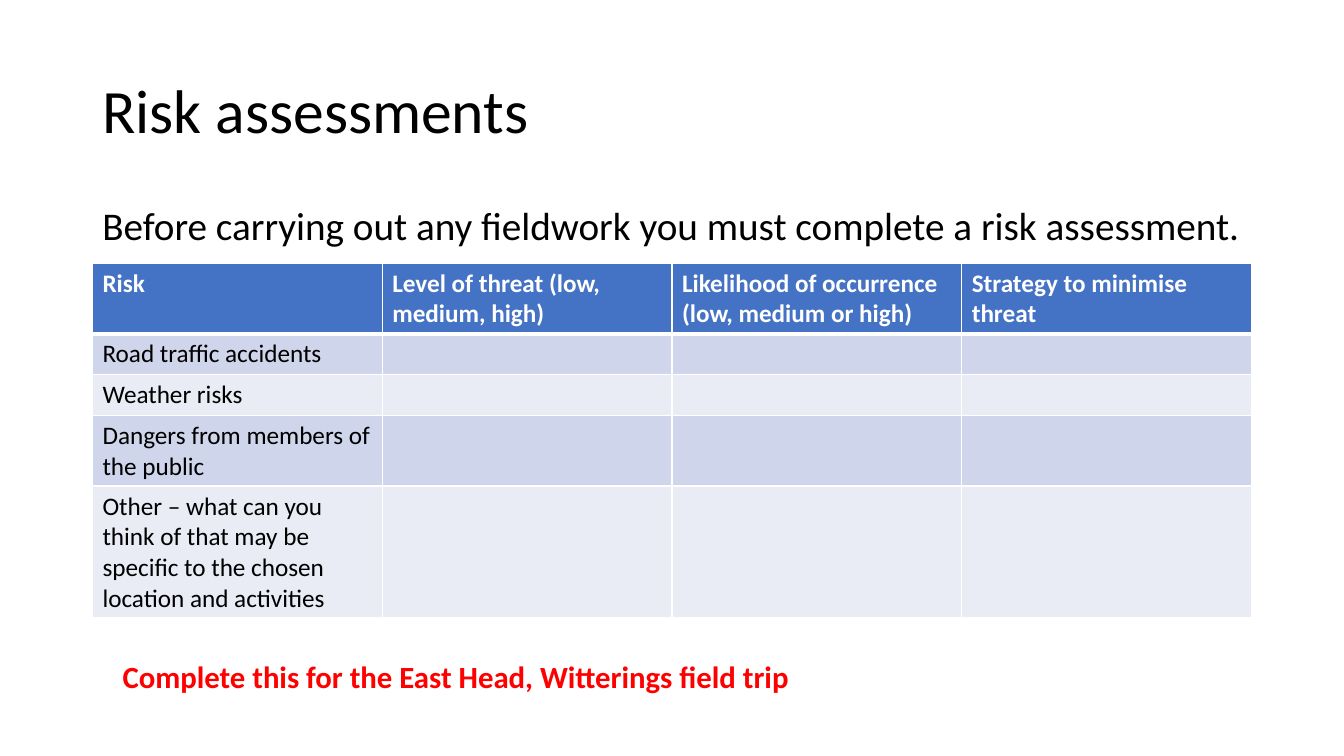
from pptx import Presentation
from pptx.dml.color import RGBColor
from pptx.enum.text import MSO_ANCHOR
from pptx.oxml.ns import qn
from pptx.util import Cm, Pt
from lxml import etree

MIDDLE, TOP = MSO_ANCHOR.MIDDLE, MSO_ANCHOR.TOP

# Content
TITLE = "Risk assessments"
INTRO = "Before carrying out any fieldwork you must complete a risk assessment."
TASK = "Complete this for the East Head, Witterings field trip"
HEADINGS = [
    "Risk",
    "Level of threat (low, medium, high)",
    "Likelihood of occurrence (low, medium or high)",
    "Strategy to minimise threat",
]
RISKS = [
    "Road traffic accidents",
    "Weather risks",
    "Dangers from members of the public",
    "Other – what can you think of that may be specific to the chosen "
    "location and activities",
]

THEME = {
    "font": "Calibri",
    "title": 44, "intro": 28, "task": 22, "cell": 18,
    "text": "000000", "alert": "FF0000", "header_text": "FFFFFF",
    "header": "4472C4", "bands": ("CFD5EA", "E9EBF5"),
    "border": "FFFFFF", "thin": 1, "thick": 3,
}

# Layout in centimetres
LEFT, WIDTH = 2.33, 29.21
TABLE_TOP, ROW_HEIGHT = 6.63, 1.03


def add_span(para, text, size, colour, bold=False):
    span = para.add_run()
    span.text = text
    font = span.font
    font.name = THEME["font"]
    font.size = Pt(size)
    font.bold = bold
    font.color.rgb = RGBColor.from_string(colour)


def add_text(page, place, text, size, colour, bold=False, anchor=TOP,
             line_spacing=None, space_before=0):
    box = page.shapes.add_textbox(*(Cm(length) for length in place))
    frame = box.text_frame
    frame.word_wrap = True
    frame.vertical_anchor = anchor
    para = frame.paragraphs[0]
    para.line_spacing = line_spacing
    para.space_before = Pt(space_before)
    add_span(para, text, size, colour, bold)


def add_borders(cell, top, bottom):
    properties = cell._tc.get_or_add_tcPr()
    thin = THEME["thin"]
    for side, width in (("L", thin), ("R", thin), ("T", top), ("B", bottom)):
        line = etree.SubElement(properties, qn(f"a:ln{side}"), w=str(Pt(width)))
        fill = etree.SubElement(line, qn("a:solidFill"))
        etree.SubElement(fill, qn("a:srgbClr"), val=THEME["border"])


def add_risk_table(page):
    rows = [HEADINGS] + [[risk] + [""] * (len(HEADINGS) - 1) for risk in RISKS]
    table = page.shapes.add_table(
        len(rows), len(HEADINGS), Cm(LEFT), Cm(TABLE_TOP),
        Cm(WIDTH), Cm(ROW_HEIGHT * len(rows))).table
    for row_index, texts in enumerate(rows):
        is_header = row_index == 0
        fill = THEME["header"] if is_header else THEME["bands"][(row_index - 1) % 2]
        colour = THEME["header_text"] if is_header else THEME["text"]
        top = THEME["thick"] if row_index == 1 else THEME["thin"]
        bottom = THEME["thick"] if is_header else THEME["thin"]
        for column_index, text in enumerate(texts):
            cell = table.cell(row_index, column_index)
            add_borders(cell, top, bottom)
            cell.fill.solid()
            cell.fill.fore_color.rgb = RGBColor.from_string(fill)
            para = cell.text_frame.paragraphs[0]
            para.font.size = Pt(THEME["cell"])
            if text:
                add_span(para, text, THEME["cell"], colour, is_header)


def main():
    deck = Presentation()
    deck.slide_width, deck.slide_height = Cm(33.87), Cm(19.05)
    page = deck.slides.add_slide(deck.slide_layouts[6])

    # Title and introduction
    add_text(page, (LEFT, 1.01, WIDTH, 3.68), TITLE, THEME["title"],
             THEME["text"], anchor=MIDDLE, line_spacing=0.9)
    add_text(page, (LEFT, 5.07, WIDTH, 12.09), INTRO, THEME["intro"],
             THEME["text"], line_spacing=0.9, space_before=10)

    # Risk table
    add_risk_table(page)

    # Task for the field trip
    add_text(page, (2.84, 16.46, 27.51, 1.2), TASK, THEME["task"],
             THEME["alert"], bold=True)

    deck.save("out.pptx")


if __name__ == "__main__":
    main()
